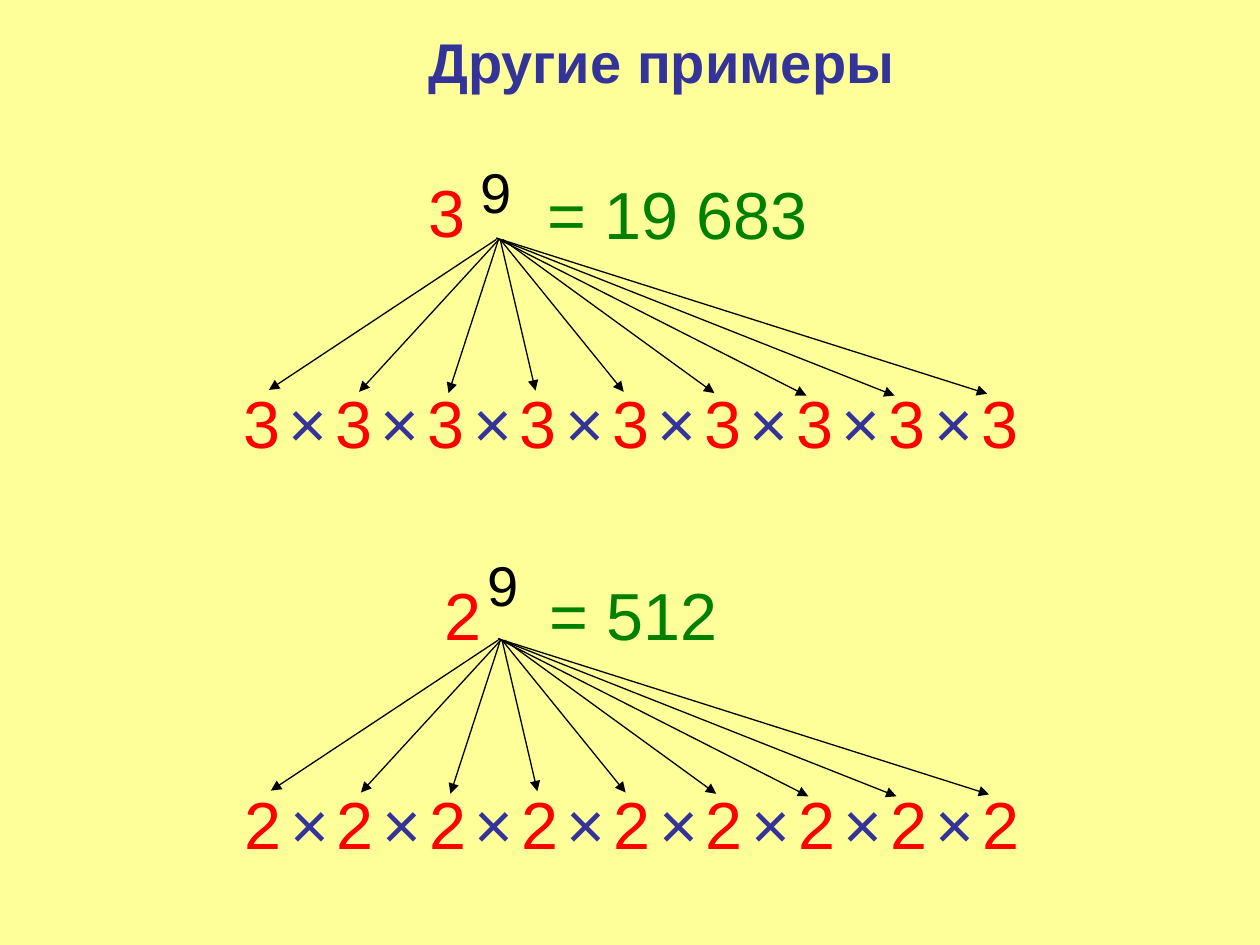
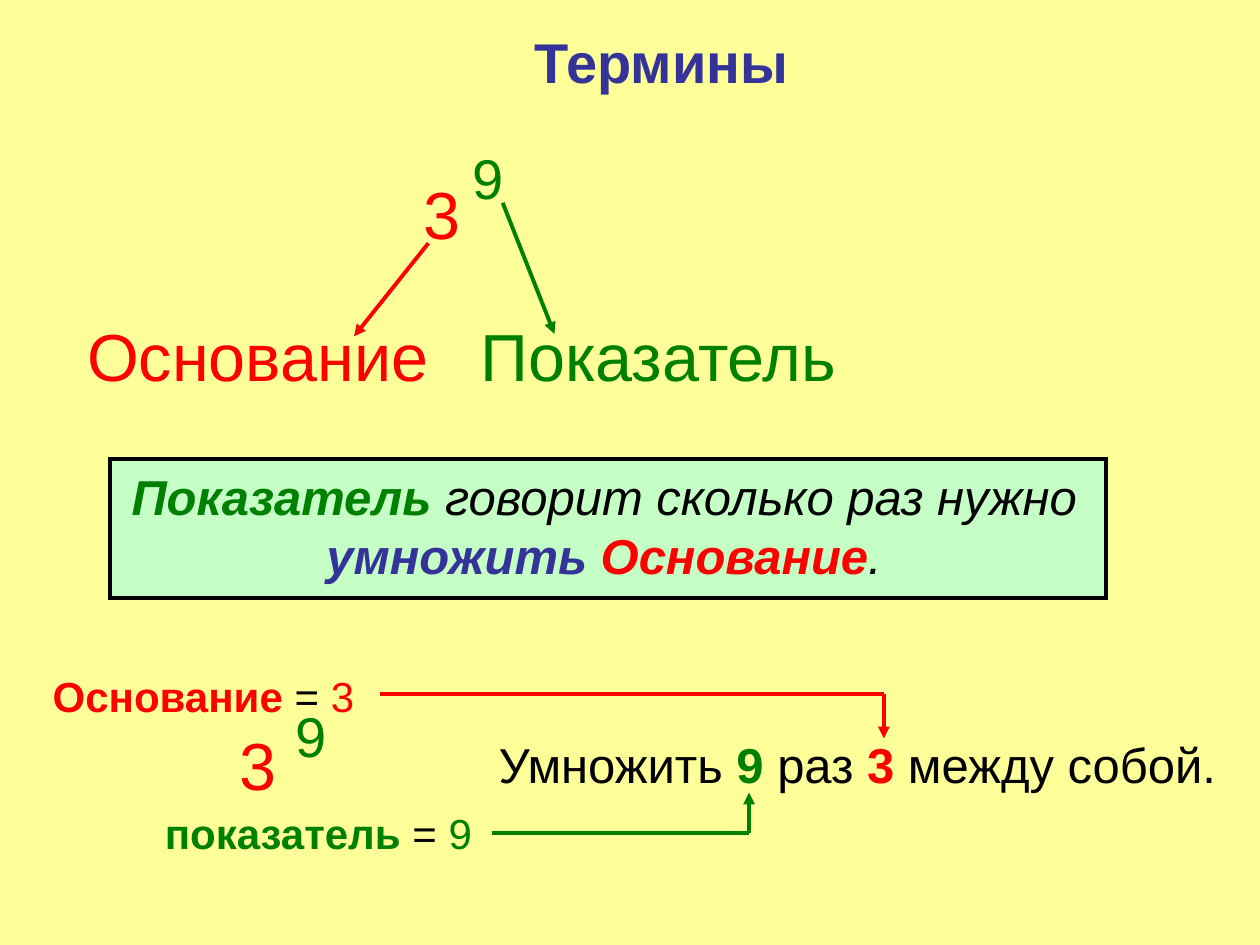
from dataclasses import dataclass

from lxml import etree
from pptx import Presentation
from pptx.dml.color import RGBColor
from pptx.enum.shapes import MSO_CONNECTOR, MSO_SHAPE
from pptx.enum.text import MSO_AUTO_SIZE, PP_ALIGN
from pptx.oxml.ns import qn
from pptx.presentation import Presentation as Deck
from pptx.slide import Slide
from pptx.util import Inches, Pt

STRAIGHT = MSO_CONNECTOR.STRAIGHT
RECTANGLE = MSO_SHAPE.RECTANGLE
FIT_SHAPE = MSO_AUTO_SIZE.SHAPE_TO_FIT_TEXT
LEFT, CENTER, RIGHT = PP_ALIGN.LEFT, PP_ALIGN.CENTER, PP_ALIGN.RIGHT

BACKGROUND = RGBColor(0xFF, 0xFF, 0x99)
PANEL = RGBColor(0xC5, 0xFF, 0xC5)
BLACK = RGBColor(0x00, 0x00, 0x00)
RED = RGBColor(0xFF, 0x00, 0x00)
GREEN = RGBColor(0x00, 0x80, 0x00)
BLUE = RGBColor(0x33, 0x33, 0x99)

FONT = "Arial"
BIG, MEDIUM, BODY, SMALL = 38, 32, 28, 24
THIN, THICK = 0.75, 2.25

# The slide is a grid of 100 columns by 75 rows of square cells.
WIDTH, HEIGHT = Inches(10), Inches(7.5)
CELL = WIDTH / 100
LINE_ROWS = {BIG: 7.3, MEDIUM: 6.3, BODY: 5.7, SMALL: 5}
DIGIT_COLUMNS = {BIG: 4.9, MEDIUM: 4.5}
SIGN_COLUMNS = 5.1

Point = tuple[float, float]


@dataclass(frozen=True)
class Span:
    text: str
    color: RGBColor
    bold: bool = False
    italic: bool = False


@dataclass(frozen=True)
class Power:
    """A base and its exponent, each placed by its top left cell."""
    base: str
    exponent: str
    base_at: Point
    exponent_at: Point
    exponent_color: RGBColor = GREEN


@dataclass(frozen=True)
class Example:
    power: Power
    result: str
    result_at: Point
    result_columns: float
    factors_at: Point
    fan_shift: Point


@dataclass(frozen=True)
class FanArrow:
    start: Point
    tip: Point


FACTOR_STEP = 7.32
SIGN_OFFSET = 3.6
FAN = [
    FanArrow((39.4, 19), (21.35, 30.95)),
    FanArrow((39.6, 19), (28.5, 31.1)),
    FanArrow((39.6, 18.9), (35.6, 31.2)),
    FanArrow((39.7, 19), (42.5, 31)),
    FanArrow((39.7, 19), (49.5, 31.1)),
    FanArrow((39.9, 19), (56.7, 31.2)),
    FanArrow((39.4, 18.9), (64, 31.4)),
    FanArrow((39.4, 18.9), (71, 31.4)),
    FanArrow((39.4, 18.9), (78.35, 31.25)),
]
EXAMPLES = [
    Example(Power("3", "9", (33, 13.1), (37.15, 12), BLACK),
            "= 19 683", (42.45, 13.2), 22.7, (18.32, 29.8), (0, 0)),
    Example(Power("2", "9", (34.3, 45.1), (37.7, 43.2), BLACK),
            "= 512", (42.6, 45.1), 15.4, (18.44, 61.63), (0.15, 31.8)),
]


def cells(count: float) -> int:
    return round(count * CELL)


def add_text(slide: Slide, at: Point, columns: float, size: int, spans: list[Span],
             align: PP_ALIGN = LEFT, wrap: bool = False, lines: float = 1) -> None:
    box = slide.shapes.add_textbox(cells(at[0]), cells(at[1]), cells(columns),
                                   cells(LINE_ROWS[size] * lines))
    frame = box.text_frame
    frame.word_wrap = wrap
    frame.auto_size = FIT_SHAPE
    paragraph = frame.paragraphs[0]
    paragraph.alignment = align
    for span in spans:
        run = paragraph.add_run()
        run.text = span.text
        run.font.name = FONT
        run.font.size = Pt(size)
        run.font.bold = span.bold
        run.font.italic = span.italic
        run.font.color.rgb = span.color


def add_path(slide: Slide, points: list[Point], color: RGBColor, weight: float) -> None:
    """Join the points with straight lines; the last line carries an arrowhead."""
    for start, end in zip(points, points[1:]):
        connector = slide.shapes.add_connector(
            STRAIGHT, *(cells(value) for value in start + end))
        connector.line.color.rgb = color
        connector.line.width = Pt(weight)
        properties = connector.element.spPr
        if end == points[-1]:
            etree.SubElement(properties.find(qn("a:ln")), qn("a:tailEnd"), type="triangle")
        etree.SubElement(properties, qn("a:effectLst"))


def add_power(slide: Slide, power: Power) -> None:
    add_text(slide, power.base_at, DIGIT_COLUMNS[BIG], BIG, [Span(power.base, RED)])
    add_text(slide, power.exponent_at, DIGIT_COLUMNS[MEDIUM], MEDIUM,
             [Span(power.exponent, power.exponent_color)])


def add_factors(slide: Slide, example: Example, first: int, stop: int) -> None:
    """Add the factors from first up to stop, then the sign before each of them."""
    left, top = example.factors_at
    for index in range(first, stop):
        add_text(slide, (left + index * FACTOR_STEP, top), DIGIT_COLUMNS[BIG], BIG,
                 [Span(example.power.base, RED)])
    for index in range(max(first, 1) - 1, stop - 1):
        add_text(slide, (left + index * FACTOR_STEP + SIGN_OFFSET, top), SIGN_COLUMNS, BIG,
                 [Span("×", BLUE)])


def add_fan(slide: Slide, shift: Point, arrows: list[FanArrow]) -> None:
    across, down = shift
    for arrow in arrows:
        points = [(x + across, y + down) for x, y in (arrow.start, arrow.tip)]
        add_path(slide, points, BLACK, THIN)


def add_example(slide: Slide, example: Example) -> None:
    """Draw a power, its value, and arrows down to the row of equal factors."""
    add_factors(slide, example, 0, 5)
    add_power(slide, example.power)
    add_factors(slide, example, 5, 6)
    add_fan(slide, example.fan_shift, FAN[:6])
    add_text(slide, example.result_at, example.result_columns, BIG,
             [Span(example.result, GREEN)])
    add_factors(slide, example, 6, 8)
    add_factors(slide, example, 8, 9)
    add_fan(slide, example.fan_shift, FAN[6:])


def add_slide(presentation: Deck) -> Slide:
    slide = presentation.slides.add_slide(presentation.slide_layouts[6])
    slide.background.fill.solid()
    slide.background.fill.fore_color.rgb = BACKGROUND
    return slide


def add_title(slide: Slide, title: str, columns: float) -> None:
    add_text(slide, (52.5 - columns / 2, 1.7), columns, MEDIUM,
             [Span(title, BLUE, bold=True)], CENTER)


def add_panel(slide: Slide) -> None:
    panel = slide.shapes.add_shape(RECTANGLE, cells(8.75), cells(36.4), cells(79), cells(11.1))
    panel.shadow.inherit = False
    panel.fill.solid()
    panel.fill.fore_color.rgb = PANEL
    panel.line.color.rgb = BLACK
    panel.line.width = Pt(THICK)
    etree.SubElement(panel.element.spPr.find(qn("a:ln")), qn("a:miter"), lim="800000")


def add_terms(slide: Slide) -> None:
    add_text(slide, (5.9, 24.5), 29.1, BIG, [Span("Основание", RED)], RIGHT)
    add_text(slide, (37.15, 24.5), 46.3, BIG, [Span("Показатель", GREEN)], wrap=True)
    add_power(slide, Power("3", "9", (32.6, 13.2), (36.5, 10.9)))
    add_path(slide, [(34, 19.3), (28.1, 26.7)], RED, THICK)
    add_path(slide, [(39.9, 16.1), (44, 26.5)], GREEN, THICK)


def add_rule(slide: Slide) -> None:
    """Write the rule that links exponent and base."""
    add_text(slide, (7.6, 36.53), 80.7, BODY, [
        Span("Показатель ", GREEN, True, True),
        Span("говорит сколько раз нужно ", BLACK, False, True),
        Span("умножить ", BLUE, True, True),
        Span("Основание", RED, True, True),
        Span(".", BLACK, False, True),
    ], CENTER, True, lines=1.81)


def add_reading(slide: Slide) -> None:
    """Show how the power is read, with arrows from each term to its number."""
    add_power(slide, Power("3", "9", (18, 57), (22.5, 55.2)))
    add_text(slide, (38.6, 57.8), 59.7, BODY, [
        Span("Умножить ", BLACK),
        Span("9 ", GREEN, True),
        Span("раз ", BLACK),
        Span("3 ", RED, True),
        Span("между собой.", BLACK),
    ], wrap=True)
    add_text(slide, (3.2, 52.7), 26, SMALL,
             [Span("Основание", RED, True), Span(" = ", BLACK), Span("3", RED)])
    add_text(slide, (12.1, 63.6), 26.4, SMALL,
             [Span("показатель", GREEN, True), Span(" = ", BLACK), Span("9", GREEN)])
    add_path(slide, [(39.05, 66.1), (59.45, 66.1), (59.45, 62.9)], GREEN, THICK)
    add_path(slide, [(30.15, 55.1), (70.15, 55.1), (70.15, 58.6)], RED, THICK)


def main() -> None:
    presentation = Presentation()
    presentation.slide_width, presentation.slide_height = WIDTH, HEIGHT

    examples_slide = add_slide(presentation)
    for example in EXAMPLES:
        add_example(examples_slide, example)
    add_title(examples_slide, "Другие примеры", 39)

    terms_slide = add_slide(presentation)
    add_panel(terms_slide)
    add_terms(terms_slide)
    add_rule(terms_slide)
    add_reading(terms_slide)
    add_title(terms_slide, "Термины", 22.4)

    presentation.save("out.pptx")


if __name__ == "__main__":
    main()
